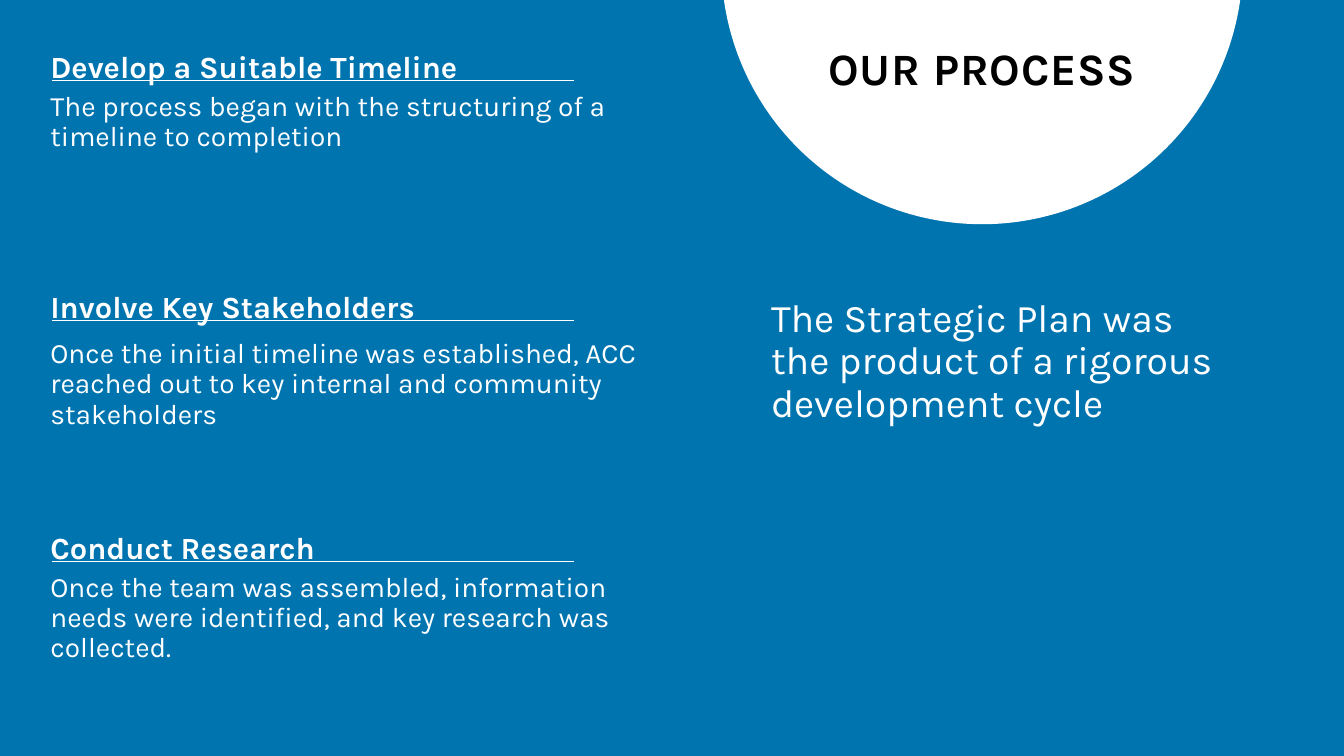
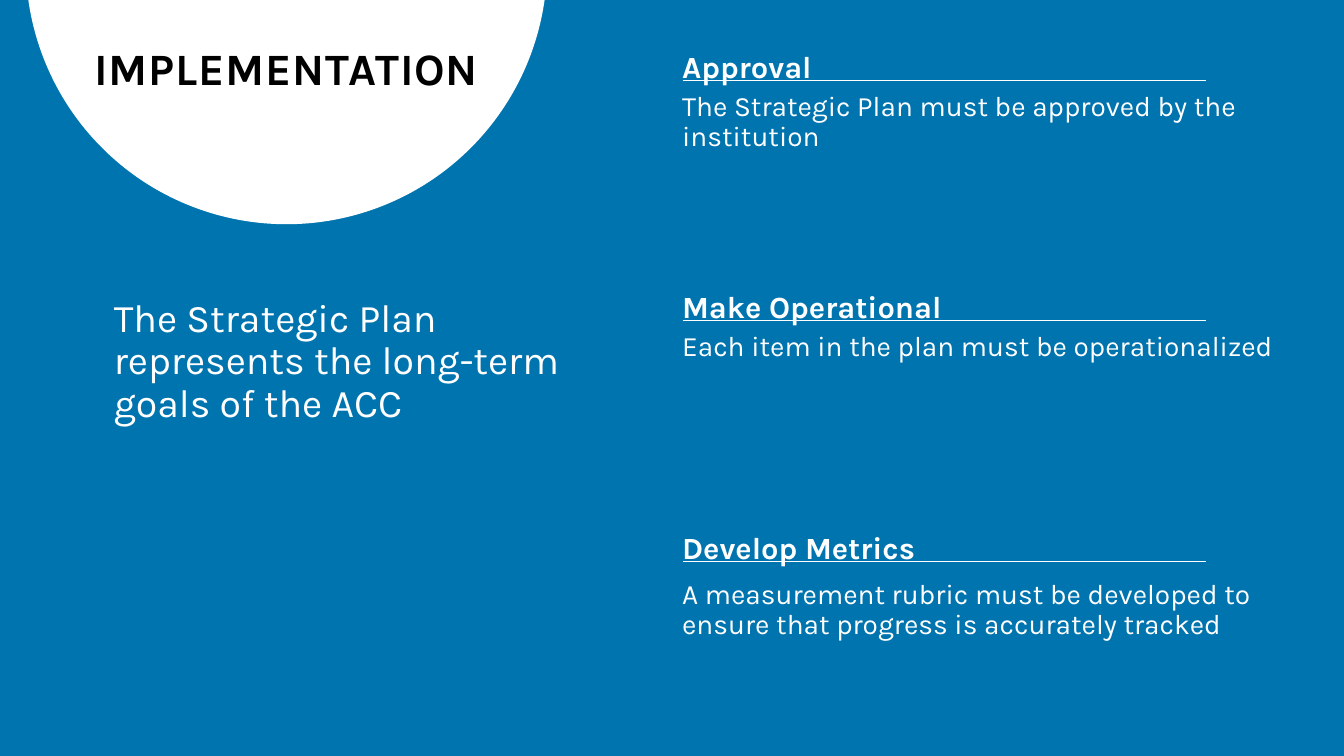
from lxml.etree import SubElement
from pptx import Presentation
from pptx.dml.color import RGBColor
from pptx.enum.shapes import MSO_CONNECTOR, MSO_SHAPE
from pptx.enum.text import MSO_ANCHOR, MSO_AUTO_SIZE, PP_ALIGN
from pptx.oxml.ns import qn
from pptx.util import Cm, Pt

# Content: each step is heading, detail, detail level, box height in cm
SLIDES = [
    {
        "title": "OUR PROCESS",
        "lead": "The Strategic Plan was the product of a rigorous development cycle",
        "circle_center": 24.75, "lead_left": 19.18, "steps_left": 1.02,
        "steps": [
            ("Develop a Suitable Timeline",
             "The process began with the structuring of a timeline to completion", 1, 2.82),
            ("Involve Key Stakeholders",
             "Once the initial timeline was established, ACC reached out to key internal "
             "and community stakeholders", 0, 3.76),
            ("Conduct Research",
             "Once the team was assembled, information needs were identified, and key "
             "research was collected.", 1, 3.58),
        ],
    },
    {
        "title": "IMPLEMENTATION",
        "lead": "The Strategic Plan represents the long-term goals of the ACC",
        "circle_center": 7.22, "lead_left": 2.62, "steps_left": 16.94,
        "steps": [
            ("Approval",
             "The Strategic Plan must be approved by the institution", 1, 2.82),
            ("Make Operational",
             "Each item in the plan must be operationalized", 1, 2.06),
            ("Develop Metrics",
             "A measurement rubric must be developed to ensure that progress is "
             "accurately tracked", 0, 4.19),
        ],
    },
]

# Shared style
COLORS = {"background": "0074AF", "light": "FFFFFF", "title": "000000"}
FONT = "Karla"
TEXT_STYLES = {
    "title": {"size": Pt(32), "bold": True, "color": "title"},
    "lead": {"size": Pt(28), "bold": False, "color": "light"},
    "heading": {"size": Pt(22), "bold": True, "color": "light"},
    "detail": {"size": Pt(20), "bold": False, "color": "light"},
}
FRAME_FORMAT = {"word_wrap": True, "vertical_anchor": MSO_ANCHOR.TOP,
                "auto_size": MSO_AUTO_SIZE.SHAPE_TO_FIT_TEXT}
TITLE_INSETS = {"margin_left": Cm(0.41), "margin_right": Cm(0.41),
                "margin_top": Cm(1.17), "margin_bottom": Cm(0.13)}
BODY_INSETS = {"margin_left": Cm(0.25), "margin_right": Cm(0.25),
               "margin_top": Cm(0.13), "margin_bottom": Cm(0.13)}

# Shared layout, in cm
CIRCLE_TOP, CIRCLE_SIZE = -7.49, 13.14
TITLE_WIDTH, TITLE_HEIGHT = 11.35, 2.54
LEAD_TOP, LEAD_WIDTH, LEAD_HEIGHT = 7.39, 12.04, 3.48
STEP_TOP, STEP_PITCH, STEP_WIDTH = 1.17, 6.06, 15.75
RULE_INDENT, RULE_DROP, RULE_WIDTH = 0.28, 0.85, 13.16
COMPARISON_LAYOUT = 4  # a title and four text placeholders


def rgb(name):
    return RGBColor.from_string(COLORS[name])


def apply(target, values):
    for name, value in values.items():
        setattr(target, name, value)


def place(shape, left, top, width, height):
    apply(shape, {"left": Cm(left), "top": Cm(top),
                  "width": Cm(width), "height": Cm(height)})


def write(shape, lines, insets, align=PP_ALIGN.LEFT):
    """Fill a placeholder with (text, style, level, space before) lines."""
    frame = shape.text_frame
    apply(frame, {**FRAME_FORMAT, **insets})
    for index, (text, style, level, space) in enumerate(lines):
        paragraph = frame.add_paragraph() if index else frame.paragraphs[0]
        apply(paragraph, {"alignment": align, "level": level, "line_spacing": 0.9,
                          "space_before": Pt(space), "space_after": Pt(0)})
        properties = paragraph._p.get_or_add_pPr()
        properties.set("marL", "0")
        properties.set("indent", "0")
        SubElement(properties, qn("a:buNone"))
        run = paragraph.add_run()
        run.text = text
        look = TEXT_STYLES[style]
        apply(run.font, {"name": FONT, "size": look["size"], "bold": look["bold"]})
        run.font.color.rgb = rgb(look["color"])


def add_circle(slide, center):
    circle = slide.shapes.add_shape(
        MSO_SHAPE.OVAL, Cm(center - CIRCLE_SIZE / 2), Cm(CIRCLE_TOP),
        Cm(CIRCLE_SIZE), Cm(CIRCLE_SIZE))
    circle.shadow.inherit = False
    circle.fill.solid()
    circle.fill.fore_color.rgb = rgb("light")
    circle.line.fill.background()
    slide.shapes._spTree.insert(2, circle._element)  # behind the title


def add_rule(slide, left, top):
    rule = slide.shapes.add_connector(
        MSO_CONNECTOR.STRAIGHT, Cm(left), Cm(top), Cm(left + RULE_WIDTH), Cm(top))
    rule.line.color.rgb = rgb("light")
    rule.line.width = Pt(0.5)
    SubElement(rule._element.spPr, qn("a:effectLst"))


def build_slide(presentation, content):
    slide = presentation.slides.add_slide(presentation.slide_layouts[COMPARISON_LAYOUT])
    title, lead, *steps = slide.placeholders
    center = content["circle_center"]

    # Title on its circle
    add_circle(slide, center)
    place(title, center - TITLE_WIDTH / 2, 0, TITLE_WIDTH, TITLE_HEIGHT)
    write(title, [(content["title"], "title", 0, 0)], TITLE_INSETS, PP_ALIGN.CENTER)
    title.text_frame.paragraphs[0].runs[0].font._element.set("spc", "60")

    # Lead statement
    place(lead, content["lead_left"], LEAD_TOP, LEAD_WIDTH, LEAD_HEIGHT)
    write(lead, [(content["lead"], "lead", 0, 12)], BODY_INSETS)

    # Steps, each with a rule under its heading
    left = content["steps_left"]
    for index, (step, (heading, detail, level, height)) in enumerate(
            zip(steps, content["steps"])):
        top = STEP_TOP + index * STEP_PITCH
        place(step, left, top, STEP_WIDTH, height)
        write(step, [(heading, "heading", 0, 10),
                     (detail, "detail", level, 5 if level else 10)], BODY_INSETS)
        add_rule(slide, left + RULE_INDENT, top + RULE_DROP)


def main():
    presentation = Presentation()
    apply(presentation, {"slide_width": Cm(33.87), "slide_height": Cm(19.05)})
    background = presentation.slide_master.background.fill
    background.solid()
    background.fore_color.rgb = rgb("background")
    for content in SLIDES:
        build_slide(presentation, content)
    presentation.save("out.pptx")


if __name__ == "__main__":
    main()
